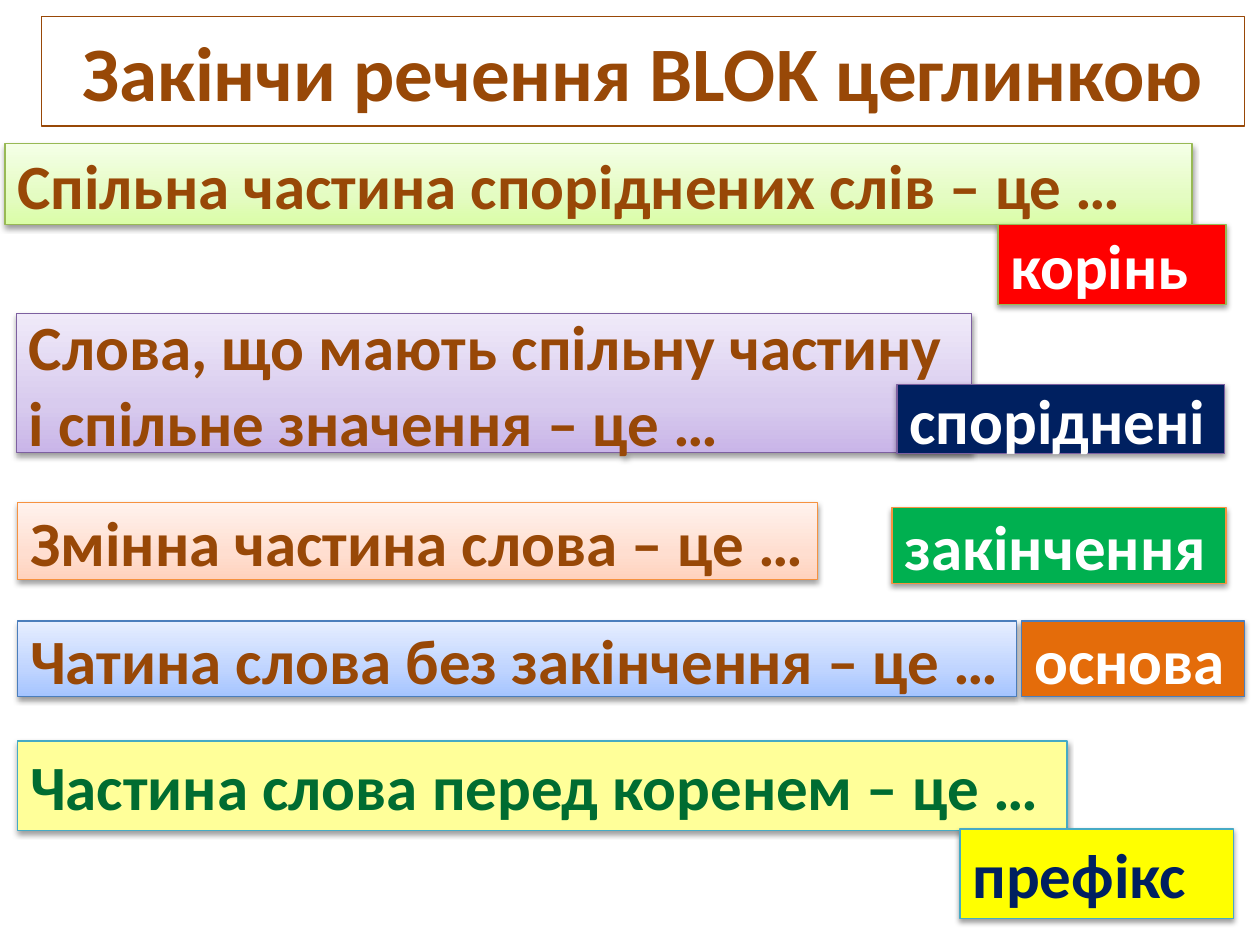
from dataclasses import dataclass

from lxml.etree import SubElement
from pptx import Presentation
from pptx.dml.color import RGBColor as RGB
from pptx.enum.shapes import MSO_SHAPE as SHAPE
from pptx.enum.text import MSO_ANCHOR as ANCHOR, MSO_AUTO_SIZE as FIT, PP_ALIGN as ALIGN
from pptx.oxml.ns import qn
from pptx.util import Inches, Pt


@dataclass(frozen=True)
class Theme:
    """Colours, font and type sizes of the slide."""
    font: str = "Calibri"
    title_size: int = 44
    text_size: int = 36
    line_width: float = 0.75
    brown: str = "984807"
    white: str = "FFFFFF"
    navy: str = "002060"
    dark_green: str = "006C31"
    red: str = "FF0000"
    green: str = "00B050"
    orange: str = "E46C0A"
    yellow: str = "FFFF00"
    pale_yellow: str = "FFFF99"
    lime_line: str = "98B955"
    violet_line: str = "7D60A0"
    peach_line: str = "F69240"
    blue_line: str = "4B7EBC"
    aqua_line: str = "46AAC5"
    lime: tuple = ("DAFDA7", "E4FCC2", "F5FFE7")
    violet: tuple = ("C9B5E8", "D8CBEE", "F0EAF9")
    peach: tuple = ("FFD2BD", "FFDED0", "FFF2ED")
    blue: tuple = ("A4C4FF", "BFD4FF", "E6EEFF")


class Builder:
    """Draws the title and the bricks on one slide."""

    def __init__(self, prs, theme):
        """Add a title-only slide."""
        self.theme = theme
        self.s = prs.slides.add_slide(prs.slide_layouts[5])

    def label(self, sp, text, size, color, align, anchor, fit=FIT.NONE):
        """Put bold text in a shape."""
        tf = sp.text_frame
        tf.word_wrap = True
        tf.auto_size = fit
        tf.vertical_anchor = anchor
        p = tf.paragraphs[0]
        p.text = text
        p.alignment = align
        p.font.name = self.theme.font
        p.font.size = Pt(size)
        p.font.bold = True
        p.font.color.rgb = RGB.from_string(color)

    def outline(self, sp, color):
        """Set the outline of a shape."""
        sp.line.color.rgb = RGB.from_string(color)
        sp.line.width = Pt(self.theme.line_width)

    def paint(self, sp, fill):
        """Fill a shape with one colour or a three-stop upward gradient."""
        if isinstance(fill, str):
            sp.fill.solid()
            sp.fill.fore_color.rgb = RGB.from_string(fill)
            return
        sp.fill.gradient()
        sp.fill.gradient_angle = 90
        stops = sp._element.spPr.find(".//" + qn("a:gsLst"))
        for stop in list(stops):
            stops.remove(stop)
        for pos, color in zip((0, 35, 100), fill):
            gs = SubElement(stops, qn("a:gs"), pos=str(pos * 1000))
            SubElement(gs, qn("a:srgbClr"), val=color)

    def shade(self, sp):
        """Give a shape a soft shadow below."""
        sp.shadow.inherit = False
        effects = sp._element.spPr.find(qn("a:effectLst"))
        shadow = SubElement(effects, qn("a:outerShdw"), blurRad="40000",
                            dist="20000", dir="5400000", rotWithShape="0")
        color = SubElement(shadow, qn("a:srgbClr"), val="000000")
        SubElement(color, qn("a:alpha"), val="38000")

    def title(self, text, box):
        """Place and format the title placeholder."""
        sp = self.s.shapes.title
        sp.left, sp.top, sp.width, sp.height = map(Inches, box)
        self.outline(sp, self.theme.brown)
        self.label(sp, text, self.theme.title_size, self.theme.brown, ALIGN.CENTER, ANCHOR.MIDDLE)

    def brick(self, text, box, fill, line, color, grow=False):
        """Draw a shaded text brick."""
        sp = self.s.shapes.add_shape(SHAPE.RECTANGLE, *map(Inches, box))
        self.paint(sp, fill)
        self.outline(sp, line)
        self.shade(sp)
        anchor, fit = (ANCHOR.TOP, FIT.SHAPE_TO_FIT_TEXT) if grow else (ANCHOR.MIDDLE, FIT.NONE)
        self.label(sp, text, self.theme.text_size, color, ALIGN.LEFT, anchor, fit)


def main():
    """Build and save the slide."""
    prs = Presentation()
    prs.slide_width, prs.slide_height = Inches(10), Inches(7.5)
    t = Theme()
    b = Builder(prs, t)
    b.title("Закінчи речення BLOK цеглинкою", (0.33, 0.13, 9.55, 0.87))
    sentences = [
        ("Спільна частина споріднених слів – це …", (0.04, 1.14, 9.42, 0.64),
         t.lime, t.lime_line, t.brown),
        ("Частина слова перед коренем – це …", (0.14, 5.88, 8.33, 0.71),
         t.pale_yellow, t.aqua_line, t.dark_green, True),
        ("Слова, що мають спільну частину і спільне значення – це …", (0.13, 2.49, 7.58, 1.1),
         t.violet, t.violet_line, t.brown),
        ("Змінна частина слова – це …", (0.14, 3.99, 6.35, 0.61),
         t.peach, t.peach_line, t.brown),
        ("Чатина слова без закінчення – це …", (0.14, 4.93, 7.93, 0.6),
         t.blue, t.blue_line, t.brown),
    ]
    answers = [
        ("корінь", (7.92, 1.78, 1.81, 0.64), t.red, t.lime_line, t.white),
        ("споріднені", (7.12, 3.05, 2.6, 0.55), t.navy, t.violet_line, t.white),
        ("закінчення", (7.08, 4.03, 2.65, 0.6), t.green, t.peach_line, t.white),
        ("основа", (8.11, 4.93, 1.77, 0.6), t.orange, t.blue_line, t.white),
        ("префікс", (7.62, 6.58, 2.17, 0.71), t.yellow, t.aqua_line, t.navy, True),
    ]
    for brick in sentences + answers:
        b.brick(*brick)
    prs.save("out.pptx")


if __name__ == "__main__":
    main()
